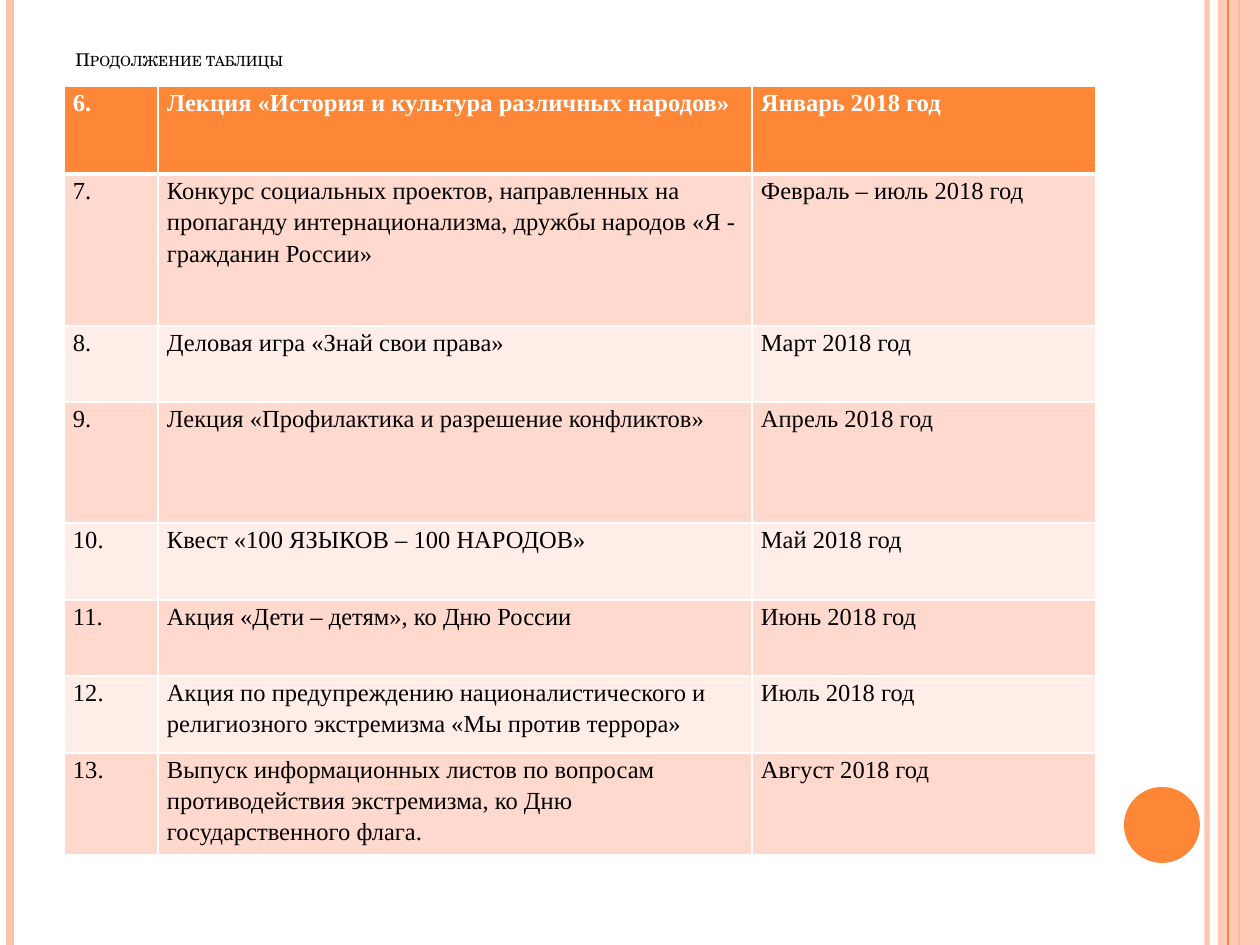
import pptx
import pptx.dml.color
import pptx.enum.shapes
import pptx.enum.text
import pptx.oxml.ns
import pptx.util
from dataclasses import dataclass
from lxml import etree


@dataclass(frozen=True)
class Theme:
    orange: str = "FE8637"
    pink: str = "FEC3AE"
    bands: tuple = ("FFEDE8", "FFD9CE")
    white: str = "FFFFFF"
    black: str = "000000"
    head: str = "TeX Gyre Schola"
    body: str = "Times New Roman"
    small: int = 10
    large: int = 14


def px(num):
    return pptx.util.Emu(round(num * 914400 / 126))


def rgb(code):
    return pptx.dml.color.RGBColor.from_string(code)


def add(node, tag, **attrs):
    return etree.SubElement(node, pptx.oxml.ns.qn(tag), **attrs)


def fade(node, alpha):
    color = next(node.iter(pptx.oxml.ns.qn("a:srgbClr")))
    add(color, "a:alpha", val=str(alpha * 1000))


class Page:
    def __init__(self, slide, theme):
        self.slide = slide
        self.theme = theme

    def line(self, x, width, color, alpha=100):
        line = self.slide.shapes.add_connector(
            pptx.enum.shapes.MSO_CONNECTOR.STRAIGHT, px(x), px(0), px(x), px(945))
        line.line.width = pptx.util.Pt(width)
        line.line.color.rgb = rgb(color)
        props = line._element.spPr
        if alpha < 100:
            fade(props, alpha)
        add(props, "a:effectLst")

    def shape(self, kind, box, color, alpha=100):
        shape = self.slide.shapes.add_shape(kind, *map(px, box))
        shape.shadow.inherit = False
        shape.fill.solid()
        shape.fill.fore_color.rgb = rgb(color)
        shape.line.fill.background()
        if alpha < 100:
            fade(shape._element.spPr, alpha)

    def style(self, para, face, size, color, bold=False):
        for run in para.runs:
            run.font.name = face
            run.font.size = pptx.util.Pt(size)
            run.font.color.rgb = rgb(color)
            run.font.bold = bold

    def title(self, box, text):
        frame = self.slide.shapes.add_textbox(*map(px, box)).text_frame
        frame.word_wrap = True
        frame.vertical_anchor = pptx.enum.text.MSO_ANCHOR.BOTTOM
        frame.text = text
        para = frame.paragraphs[0]
        self.style(para, self.theme.head, self.theme.small, self.theme.black)
        para.runs[0].font._element.set("cap", "small")

    def edge(self, cell, side, width):
        line = add(cell._tc.get_or_add_tcPr(), "a:ln" + side,
                   w=str(pptx.util.Pt(width)))
        add(add(line, "a:solidFill"), "a:srgbClr", val=self.theme.white)

    def cell(self, cell, text, row):
        top = row == 0
        cell.margin_left = cell.margin_right = px(9)
        cell.margin_top = cell.margin_bottom = 0
        for side in "LRTB":
            thick = (top and side == "B") or (row == 1 and side == "T")
            self.edge(cell, side, 3 if thick else 1)
        cell.fill.solid()
        fill = self.theme.orange if top else self.theme.bands[row % 2]
        cell.fill.fore_color.rgb = rgb(fill)
        cell.text_frame.text = text
        para = cell.text_frame.paragraphs[0]
        para.line_spacing = 1.15
        ink = self.theme.white if top else self.theme.black
        self.style(para, self.theme.body, self.theme.large, ink, top)

    def table(self, left, top, cols, rows, data):
        box = left, top, sum(cols), sum(rows)
        table = self.slide.shapes.add_table(
            len(rows), len(cols), *map(px, box)).table
        for col, width in zip(table.columns, cols):
            col.width = px(width)
        for row, height in zip(table.rows, rows):
            row.height = px(height)
        for i, line in enumerate(data):
            for j, text in enumerate(line):
                self.cell(table.cell(i, j), text, i)


EVENTS = [
    ("Лекция «История и культура различных народов»", "Январь 2018 год"),
    ("Конкурс социальных проектов, направленных на пропаганду "
     "интернационализма, дружбы народов «Я - гражданин России»",
     "Февраль – июль 2018 год"),
    ("Деловая игра «Знай свои права»", "Март 2018 год"),
    ("Лекция «Профилактика и разрешение конфликтов»", "Апрель 2018 год"),
    ("Квест «100 ЯЗЫКОВ – 100 НАРОДОВ»", "Май 2018 год"),
    ("Акция «Дети – детям», ко Дню России", "Июнь 2018 год"),
    ("Акция по предупреждению националистического и религиозного "
     "экстремизма «Мы против террора»", "Июль 2018 год"),
    ("Выпуск информационных листов по вопросам противодействия "
     "экстремизма, ко Дню государственного флага.", "Август 2018 год"),
]


def main():
    deck = pptx.Presentation()
    deck.slide_width, deck.slide_height = px(1260), px(945)
    theme = Theme()
    page = Page(deck.slides.add_slide(deck.slide_layouts[6]), theme)
    kinds = pptx.enum.shapes.MSO_SHAPE

    page.line(1207, 3, theme.pink, 93)
    page.line(10, 4.5, theme.pink)
    page.line(1239, 1.5, theme.orange)
    page.shape(kinds.RECTANGLE, (1218, 0, 42, 945), theme.pink, 87)
    page.line(1228, 0.75, theme.orange)
    page.shape(kinds.OVAL, (1124, 787, 76, 76), theme.orange)

    page.title((63, 38, 1029, 38), "Продолжение таблицы")
    data = [(f"{num}.", *event) for num, event in enumerate(EVENTS, 6)]
    page.table(64, 86, (94, 594, 344),
               (88, 152, 76, 121, 77, 76, 77, 92), data)
    deck.save("out.pptx")


if __name__ == "__main__":
    main()
